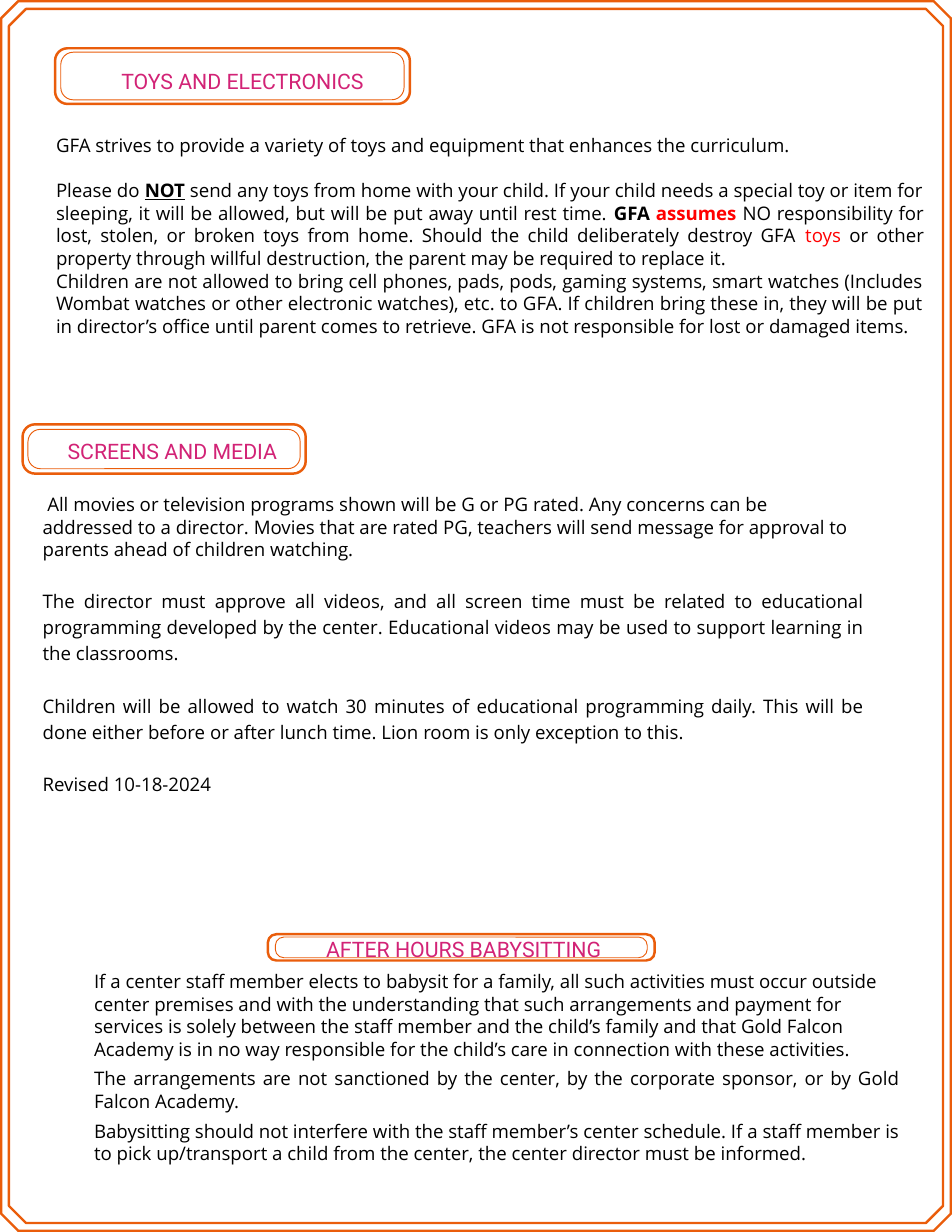
from dataclasses import dataclass

from pptx import Presentation
from pptx.dml.color import RGBColor
from pptx.enum.shapes import MSO_SHAPE
from pptx.enum.text import MSO_ANCHOR, MSO_AUTO_SIZE, PP_ALIGN
from pptx.util import Pt


@dataclass(frozen=True)
class Theme:
    orange: str = "EA5D0B"
    pink: str = "D22376"
    red: str = "FF0000"
    black: str = "000000"
    heading_font: str = "Roboto"
    body_font: str = "Open Sans"
    heading_size: float = 13.7
    body_size: float = 12
    heading_line: float = 19.2
    tight_line: float = 14.5
    open_line: float = 16.8


THEME = Theme()
PAGE_WIDTH, PAGE_HEIGHT = 612, 792


@dataclass(frozen=True)
class Box:
    left: float
    top: float
    width: float
    height: float

    def inset(self, across: float, down: float) -> "Box":
        return Box(self.left + across, self.top + down,
                   self.width - 2 * across, self.height - 2 * down)

    def lengths(self) -> tuple:
        return Pt(self.left), Pt(self.top), Pt(self.width), Pt(self.height)


@dataclass(frozen=True)
class Run:
    text: str
    bold: bool = False
    underline: bool = False
    color: str = THEME.black


@dataclass(frozen=True)
class Block:
    runs: tuple
    align: PP_ALIGN = PP_ALIGN.JUSTIFY
    before: float = 0
    indent: float = 0


@dataclass(frozen=True)
class Heading:
    text: str
    text_box: Box
    frame: Box
    gap: tuple
    radius: float


def add_outline(slide, preset: MSO_SHAPE, box: Box, corner: float, width: float) -> None:
    """Draw an unfilled frame whose line lies just inside the box."""
    box = box.inset(width / 2, width / 2)
    shape = slide.shapes.add_shape(preset, *box.lengths())
    shape.shadow.inherit = False
    shape.adjustments[0] = corner / min(box.width, box.height)
    shape.fill.background()
    shape.line.color.rgb = RGBColor.from_string(THEME.orange)
    shape.line.width = Pt(width)


def write_text(shape, blocks: list, *, font: str = THEME.body_font,
               size: float = THEME.body_size, line: float = THEME.tight_line) -> None:
    """Fill a shape with formatted paragraphs."""
    frame = shape.text_frame
    frame.word_wrap = True
    frame.auto_size = MSO_AUTO_SIZE.NONE
    frame.vertical_anchor = MSO_ANCHOR.TOP
    frame.margin_left = frame.margin_right = frame.margin_top = frame.margin_bottom = 0
    for index, block in enumerate(blocks):
        paragraph = frame.add_paragraph() if index else frame.paragraphs[0]
        paragraph.alignment = block.align
        paragraph.line_spacing = Pt(line)
        paragraph.space_before = Pt(block.before)
        paragraph.space_after = Pt(0)
        if block.indent:
            paragraph._p.get_or_add_pPr().set("indent", str(Pt(block.indent)))
        for part in block.runs:
            run = paragraph.add_run()
            run.text = part.text
            run.font.name = font
            run.font.size = Pt(size)
            run.font.bold = part.bold
            run.font.underline = part.underline
            run.font.color.rgb = RGBColor.from_string(part.color)


def add_body(slide, box: Box, blocks: list, line: float = THEME.tight_line) -> None:
    write_text(slide.shapes.add_textbox(*box.lengths()), blocks, line=line)


def add_heading(slide, heading: Heading, shape=None) -> None:
    """Draw the double frame and write the heading, in a given shape or a new box."""
    add_outline(slide, MSO_SHAPE.ROUNDED_RECTANGLE, heading.frame, heading.radius, 1.6)
    add_outline(slide, MSO_SHAPE.ROUNDED_RECTANGLE, heading.frame.inset(*heading.gap),
                heading.radius, 0.6)
    lengths = heading.text_box.lengths()
    if shape is None:
        shape = slide.shapes.add_textbox(*lengths)
    else:
        shape.left, shape.top, shape.width, shape.height = lengths
    write_text(shape, [Block((Run(heading.text, color=THEME.pink),), PP_ALIGN.CENTER)],
               font=THEME.heading_font, size=THEME.heading_size, line=THEME.heading_line)


TOYS = Heading("TOYS AND ELECTRONICS", Box(59.8, 41, 192.2, 19.4),
               Box(34.6, 30.2, 229.7, 37.4), (4.2, 3.1), 8)
SCREENS = Heading("SCREENS AND MEDIA", Box(33.1, 279, 155.5, 19.4),
                  Box(13.7, 272, 183.6, 33.3), (4, 3.7), 8)
BABYSITTING = Heading("AFTER HOURS BABYSITTING", Box(189.4, 599.4, 217.4, 19.4),
                      Box(171.4, 599.8, 250.3, 18.5), (5.3, 2.3), 5.5)

TOYS_TEXT = [
    Block((Run("GFA strives to provide a variety of toys and equipment that enhances "
               "the curriculum."),), PP_ALIGN.LEFT),
    Block((
        Run("Please do "),
        Run("NOT", bold=True, underline=True),
        Run(" send any toys from home with your child. If your child needs a special toy "
            "or item for sleeping, it will be allowed, but will be put away until rest time. "),
        Run("GFA ", bold=True),
        Run("assumes ", bold=True, color=THEME.red),
        Run("NO responsibility for lost, stolen, or broken toys from home. Should the child "
            "deliberately destroy GFA "),
        Run("toys ", color=THEME.red),
        Run("or other property through willful destruction, the parent may be required "
            "to replace it."),
    ), before=THEME.tight_line),
    Block((Run("Children are not allowed to bring cell phones, pads, pods, gaming systems, "
               "smart watches (Includes Wombat watches or other electronic watches), etc. to "
               "GFA. If children bring these in, they will be put in director’s office until "
               "parent comes to retrieve. GFA is not responsible for lost or damaged items."),)),
]
MOVIES_TEXT = [
    Block((Run("All movies or television programs shown will be G or PG rated. Any concerns "
               "can be addressed to a director. Movies that are rated PG, teachers will send "
               "message for approval to parents ahead of children watching."),),
          PP_ALIGN.LEFT, indent=3),
]
SCREEN_TIME_TEXT = [
    Block((Run(text),), before=THEME.open_line if index else 0)
    for index, text in enumerate((
        "The director must approve all videos, and all screen time must be related to "
        "educational programming developed by the center. Educational videos may be used to "
        "support learning in the classrooms.",
        "Children will be allowed to watch 30 minutes of educational programming daily. This "
        "will be done either before or after lunch time. Lion room is only exception to this.",
        "Revised 10-18-2024",
    ))
]
BABYSITTING_TEXT = [
    Block((Run("If a center staff member elects to babysit for a family, all such activities "
               "must occur outside center premises and with the understanding that such "
               "arrangements and payment for services is solely between the staff member and "
               "the child’s family and that Gold Falcon Academy is in no way responsible for "
               "the child’s care in connection with these activities."),), PP_ALIGN.LEFT),
    Block((Run("The arrangements are not sanctioned by the center, by the corporate sponsor, "
               "or by Gold Falcon Academy."),), before=4.5),
    Block((Run("Babysitting should not interfere with the staff member’s center schedule. If "
               "a staff member is to pick up/transport a child from the center, the center "
               "director must be informed."),), before=4.5),
]


def main() -> None:
    presentation = Presentation()
    presentation.slide_width, presentation.slide_height = Pt(PAGE_WIDTH), Pt(PAGE_HEIGHT)
    slide = presentation.slides.add_slide(presentation.slide_layouts[5])

    # Page border
    page = Box(0, 0, PAGE_WIDTH, PAGE_HEIGHT)
    for gap in (0, 5):
        add_outline(slide, MSO_SHAPE.OCTAGON, page.inset(gap, gap), 11, 1.5)

    # Toys and electronics
    add_heading(slide, TOYS, slide.shapes.title)
    add_body(slide, Box(36, 86, 558, 132), TOYS_TEXT)

    # Screens and media
    add_heading(slide, SCREENS)
    add_body(slide, Box(27.4, 316.8, 520, 45), MOVIES_TEXT)
    add_body(slide, Box(27.4, 376.9, 528.5, 136), SCREEN_TIME_TEXT, THEME.open_line)

    # After hours babysitting
    add_heading(slide, BABYSITTING)
    add_body(slide, Box(60.5, 623.4, 518.4, 126), BABYSITTING_TEXT)

    presentation.save("out.pptx")


if __name__ == "__main__":
    main()
